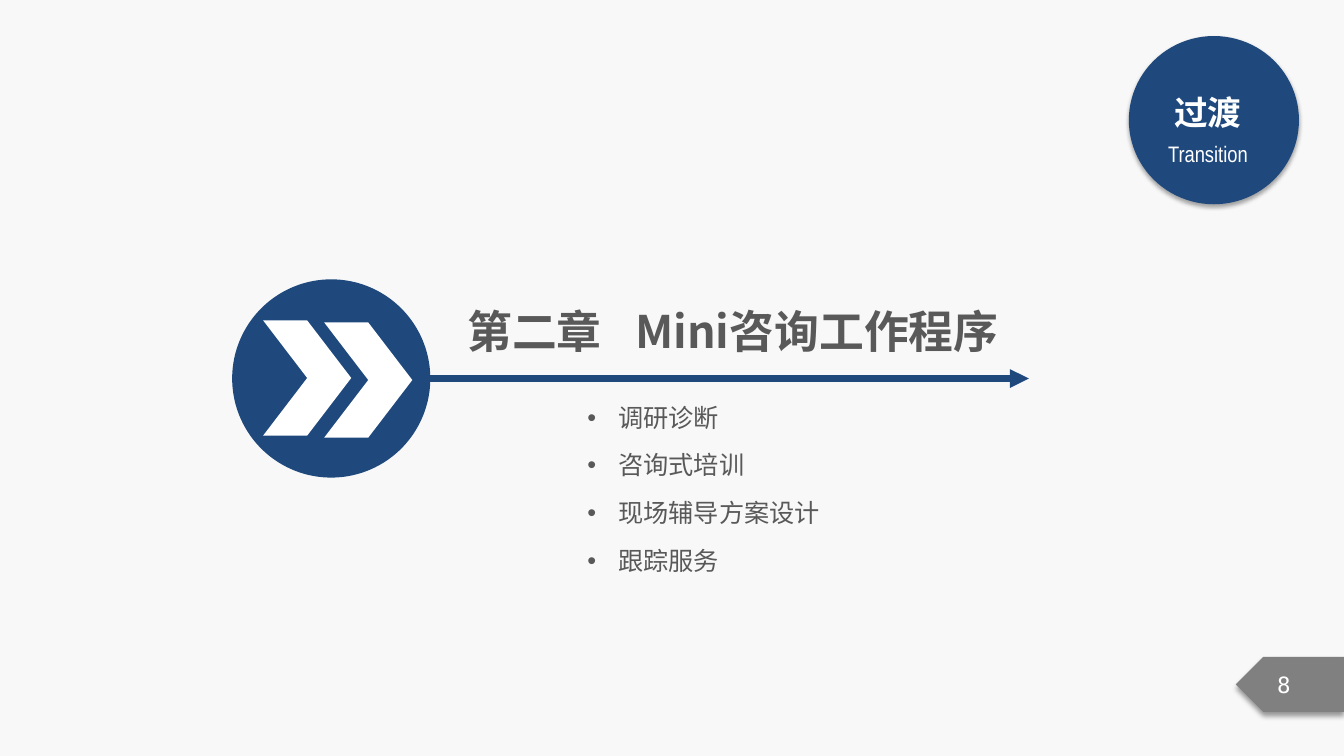
from lxml import etree
from pptx import Presentation, util as u
from pptx.dml.color import RGBColor
from pptx.enum import shapes, text
from pptx.oxml import parse_xml
from pptx.oxml.ns import nsdecls, qn

PX = 9080  # EMU in one px
NAVY, GRAY, INK, WHITE, PAPER = "1F497D", "808080", "595959", "FFFFFF", "F8F8F8"
CJK = "Noto Sans CJK SC"
KIND = shapes.MSO_SHAPE


def px(n):
    return u.Emu(n * PX)


def rgb(code):
    return RGBColor.from_string(code)


class Deck:
    def __init__(self, wide, high):
        self.prs = Presentation()
        self.prs.slide_width, self.prs.slide_height = px(wide), px(high)
        self.slide = self.prs.slides.add_slide(self.prs.slide_layouts[6])
        fill = self.slide.background.fill
        fill.solid()
        fill.fore_color.rgb = rgb(PAPER)

    def shape(self, kind, x, y, w, h, fill, flip=False, shade=None):
        """Draw a plain shape; shade is (opacity %, blur pt, distance pt)."""
        item = self.slide.shapes.add_shape(kind, px(x), px(y), px(w), px(h))
        item.shadow.inherit = False
        item.fill.solid()
        item.fill.fore_color.rgb = rgb(fill)
        item.line.fill.background()
        props = item._element.spPr
        if flip:
            props.find(qn("a:xfrm")).set("flipH", "1")
        if shade:
            alpha, blur, dist = shade
            props.find(qn("a:effectLst")).append(parse_xml(
                f'<a:outerShdw {nsdecls("a")} blurRad="{u.Pt(blur)}" '
                f'dist="{u.Pt(dist)}" dir="5400000" rotWithShape="0">'
                f'<a:srgbClr val="000000"><a:alpha val="{alpha * 1000}"/>'
                '</a:srgbClr></a:outerShdw>'))
        return item

    def arrow(self, x, y, end, color, width):
        item = self.slide.shapes.add_connector(
            shapes.MSO_CONNECTOR.STRAIGHT, px(x), px(y), px(end), px(y))
        item.line.color.rgb = rgb(color)
        item.line.width = u.Pt(width)
        etree.SubElement(item.line._get_or_add_ln(), qn("a:tailEnd"), type="triangle")
        etree.SubElement(item._element.spPr, qn("a:effectLst"))
        return item

    def text(self, words, x, y, w, h, size=18, color=INK, font=CJK,
             bold=False, mid=False, dot=0, tab=0):
        """Write one line; dot is a bullet indent and tab a tab stop, in px."""
        item = self.slide.shapes.add_textbox(px(x), px(y), px(w), px(h))
        frame = item.text_frame
        frame.word_wrap = True
        frame.auto_size = text.MSO_AUTO_SIZE.SHAPE_TO_FIT_TEXT
        para = frame.paragraphs[0]
        para.alignment = text.PP_ALIGN.CENTER if mid else text.PP_ALIGN.LEFT
        props = para._p.get_or_add_pPr()
        if dot:
            props.set("marL", str(px(dot)))
            props.set("indent", str(px(-dot)))
            etree.SubElement(props, qn("a:buFont"), typeface="Arial")
            etree.SubElement(props, qn("a:buChar"), char="•")
        if tab:
            stops = etree.SubElement(props, qn("a:tabLst"))
            etree.SubElement(stops, qn("a:tab"), pos=str(px(tab)), algn="l")
        run = para.add_run()
        run.text = words
        run.font.size, run.font.bold = u.Pt(size), bold
        run.font.name = font
        run.font.color.rgb = rgb(color)
        etree.SubElement(run._r.get_or_add_rPr(), qn("a:ea"), typeface=CJK)
        return item


def main():
    deck = Deck(1343, 755)

    deck.shape(KIND.OVAL, 1128, 36, 170, 168, NAVY, shade=(35, 3.1, 1.8))
    deck.text("Transition", 1124, 135, 166, 37, size=16, color=WHITE,
              font="Arial Narrow", mid=True)
    deck.text("过渡", 1124, 87, 166, 50, size=24, color=WHITE,
              font="Calibri", bold=True, mid=True)

    deck.shape(KIND.PENTAGON, 1235, 656, 108, 55, GRAY, flip=True, shade=(40, 4, 3))
    deck.text("8 ", 1254, 665, 71, 37, size=16, color=WHITE,
              font="DejaVu Sans Mono", mid=True)

    deck.arrow(430, 378, 1028, NAVY, 4.5)
    deck.shape(KIND.OVAL, 232, 279, 198, 198, NAVY)
    for x, y in ((263, 320), (324, 322)):
        deck.shape(KIND.CHEVRON, x, y, 88, 115, WHITE)

    deck.text("第二章\tMini咨询工作程序", 457, 298, 563, 63, size=32,
              bold=True, tab=168)
    topics = ("调研诊断", "咨询式培训", "现场辅导方案设计", "跟踪服务")
    for i, topic in enumerate(topics):
        deck.text(topic, 577, 397 + i * 143 // 3, 397, 40, dot=31)

    deck.prs.save("out.pptx")


if __name__ == "__main__":
    main()
